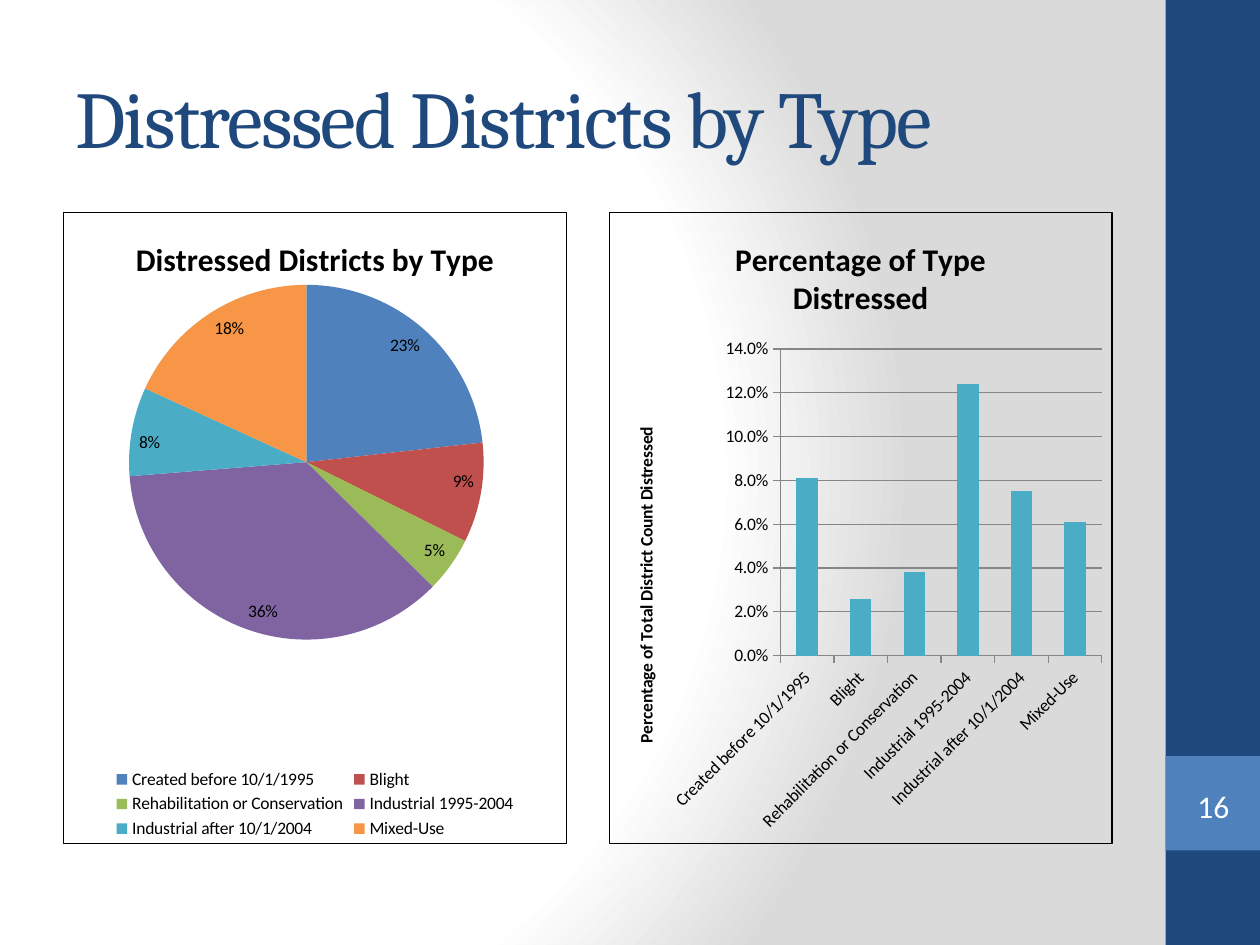
from dataclasses import dataclass

from pptx import Presentation
from pptx import util as u
from pptx.chart.data import CategoryChartData
from pptx.dml.color import RGBColor
from pptx.enum import chart as ch
from pptx.enum import shapes, text
from pptx.oxml import parse_xml
from pptx.oxml.ns import nsdecls, qn

NAVY, BLUE, TEAL, AXIS_GREY = "1F497D", "4F81BD", "4BACC6", "868686"
SLICE_COLORS = [BLUE, "C0504D", "9BBB59", "8064A2", TEAL, "F79646"]
DISTRICT_TYPES = [
    "Created before 10/1/1995", "Blight", "Rehabilitation or Conservation",
    "Industrial 1995-2004", "Industrial after 10/1/2004", "Mixed-Use",
]


@dataclass
class Box:
    left: float
    top: float
    width: float
    height: float

    def lengths(self) -> list:
        return [u.Inches(n) for n in (self.left, self.top, self.width, self.height)]


@dataclass
class Panel:
    title: str
    kind: ch.XL_CHART_TYPE
    left: float
    values: list
    number_format: str


def rgb(code: str) -> RGBColor:
    return RGBColor.from_string(code)


def style(font, size: float, color: str, name: str = "Calibri", bold: bool = False) -> None:
    font.size, font.name, font.bold = u.Pt(size), name, bold
    font.color.rgb = rgb(color)


def set_background(slide) -> None:
    slide.background.fill.solid()
    stops = "".join(
        f'<a:gs pos="{percent * 1000}"><a:srgbClr val="{color}"/></a:gs>'
        for percent, color in ((0, "FFFFFF"), (75, "FFFFFF"), (100, "DADADA"))
    )
    gradient = parse_xml(
        f'<a:gradFill {nsdecls("a")} rotWithShape="1"><a:gsLst>{stops}</a:gsLst>'
        '<a:path path="circle"><a:fillToRect l="20000" t="50000" r="100000" b="50000"/>'
        "</a:path></a:gradFill>"
    )
    solid = slide.element.find(".//" + qn("p:bgPr")).find(qn("a:solidFill"))
    solid.getparent().replace(solid, gradient)


def add_block(slide, box: Box, color: str) -> None:
    block = slide.shapes.add_shape(shapes.MSO_SHAPE.RECTANGLE, *box.lengths())
    block.shadow.inherit = False
    block.fill.solid()
    block.fill.fore_color.rgb = rgb(color)
    block.line.fill.background()


def add_title(slide, box: Box, wording: str) -> None:
    frame = slide.shapes.add_textbox(*box.lengths()).text_frame
    frame.word_wrap = True
    frame.vertical_anchor = text.MSO_ANCHOR.MIDDLE
    frame.text = wording
    run = frame.paragraphs[0].runs[0]
    style(run.font, 46, NAVY, "Cambria")
    run.font._element.set("spc", "-100")


def add_page_number(slide, box: Box, number: str) -> None:
    bracket = slide.shapes.add_shape(shapes.MSO_SHAPE.DOUBLE_BRACKET, *box.lengths())
    bracket.adjustments[0] = 0.18
    bracket.shadow.inherit = False
    bracket.fill.background()
    bracket.line.fill.background()
    frame = bracket.text_frame
    frame.margin_left = frame.margin_top = frame.margin_right = frame.margin_bottom = 0
    frame.vertical_anchor = text.MSO_ANCHOR.MIDDLE
    frame.text = number
    frame.paragraphs[0].alignment = text.PP_ALIGN.CENTER
    style(frame.paragraphs[0].runs[0].font, 18, "FFFFFF")


def write_heading(heading, wording: str, size: float) -> None:
    heading.text_frame.text = wording
    style(heading.text_frame.paragraphs[0].runs[0].font, size, "000000", bold=True)


def add_panel(slide, panel: Panel):
    data = CategoryChartData(number_format=panel.number_format)
    data.categories = DISTRICT_TYPES
    data.add_series("Series 1", panel.values)
    box = Box(panel.left, 1.68, 4, 5.02)
    chart = slide.shapes.add_chart(panel.kind, *box.lengths(), data).chart
    style(chart.font, 10, "000000")
    chart.has_title = True
    write_heading(chart.chart_title, panel.title, 18)
    chart.element.find(qn("c:chart")).addnext(parse_xml(
        f'<c:spPr {nsdecls("c", "a")}><a:noFill/><a:ln w="9525"><a:solidFill>'
        '<a:srgbClr val="000000"/></a:solidFill></a:ln></c:spPr>'
    ))
    return chart


def format_pie(chart) -> None:
    chart.has_legend = True
    chart.legend.position = ch.XL_LEGEND_POSITION.BOTTOM
    chart.legend.include_in_layout = False
    plot = chart.plots[0]
    plot.vary_by_categories = True
    for index, color in enumerate(SLICE_COLORS):
        fill = plot.series[0].points[index].format.fill
        fill.solid()
        fill.fore_color.rgb = rgb(color)
    plot.has_data_labels = True
    labels = plot.data_labels
    labels.show_percentage, labels.show_value = True, False
    labels.number_format, labels.number_format_is_linked = "0%", False
    labels.position = ch.XL_LABEL_POSITION.INSIDE_END
    modes = "".join(f'<c:{side}Mode val="edge"/>' for side in "xy")
    sizes = "".join(
        f'<c:{side} val="{share}"/>'
        for side, share in (("x", 0.13), ("y", 0.115), ("w", 0.706), ("h", 0.562))
    )
    area = chart.element.find(".//" + qn("c:plotArea"))
    for layout in area.findall(qn("c:layout")):
        area.remove(layout)
    area.insert(0, parse_xml(
        f'<c:layout {nsdecls("c")}><c:manualLayout><c:layoutTarget val="inner"/>'
        f"{modes}{sizes}</c:manualLayout></c:layout>"
    ))


def format_columns(chart) -> None:
    chart.has_legend = False
    plot = chart.plots[0]
    plot.vary_by_categories = False
    plot.gap_width = 150
    fill = plot.series[0].format.fill
    fill.solid()
    fill.fore_color.rgb = rgb(TEAL)
    types, shares = chart.category_axis, chart.value_axis
    shares.minimum_scale, shares.maximum_scale, shares.major_unit = 0, 0.14, 0.02
    shares.has_major_gridlines = True
    shares.tick_labels.number_format = "0.0%"
    shares.tick_labels.number_format_is_linked = False
    shares.has_title = True
    write_heading(shares.axis_title, "Percentage of Total District Count Distressed", 10)
    for axis in (types, shares):
        axis.major_tick_mark = ch.XL_TICK_MARK.OUTSIDE
        style(axis.tick_labels.font, 10, "000000")
    for stroke in (types.format.line, shares.format.line, shares.major_gridlines.format.line):
        stroke.width = u.Pt(0.75)
        stroke.color.rgb = rgb(AXIS_GREY)
    types._element.find(qn("c:txPr")).find(qn("a:bodyPr")).set("rot", "-2700000")


def main() -> None:
    """Build the slide of distressed districts by type and save it."""
    deck = Presentation()
    deck.slide_width, deck.slide_height = u.Inches(10), u.Inches(7.5)
    slide = deck.slides.add_slide(deck.slide_layouts[6])
    set_background(slide)
    add_block(slide, Box(9.25, 0, 0.75, 7.5), NAVY)
    add_block(slide, Box(9.25, 6, 0.75, 0.75), BLUE)
    add_title(slide, Box(0.5, 0.3, 8.33, 1.25), "Distressed Districts by Type")
    format_pie(add_panel(slide, Panel(
        "Distressed Districts by Type", ch.XL_CHART_TYPE.PIE, 0.5,
        [23, 9, 5, 36, 8, 18], "0")))
    add_page_number(slide, Box(9.33, 6.18, 0.6, 0.43), "16")
    format_columns(add_panel(slide, Panel(
        "Percentage of Type Distressed", ch.XL_CHART_TYPE.COLUMN_CLUSTERED, 4.83,
        [0.081, 0.026, 0.038, 0.124, 0.075, 0.061], "0.0%")))
    deck.save("out.pptx")


if __name__ == "__main__":
    main()
